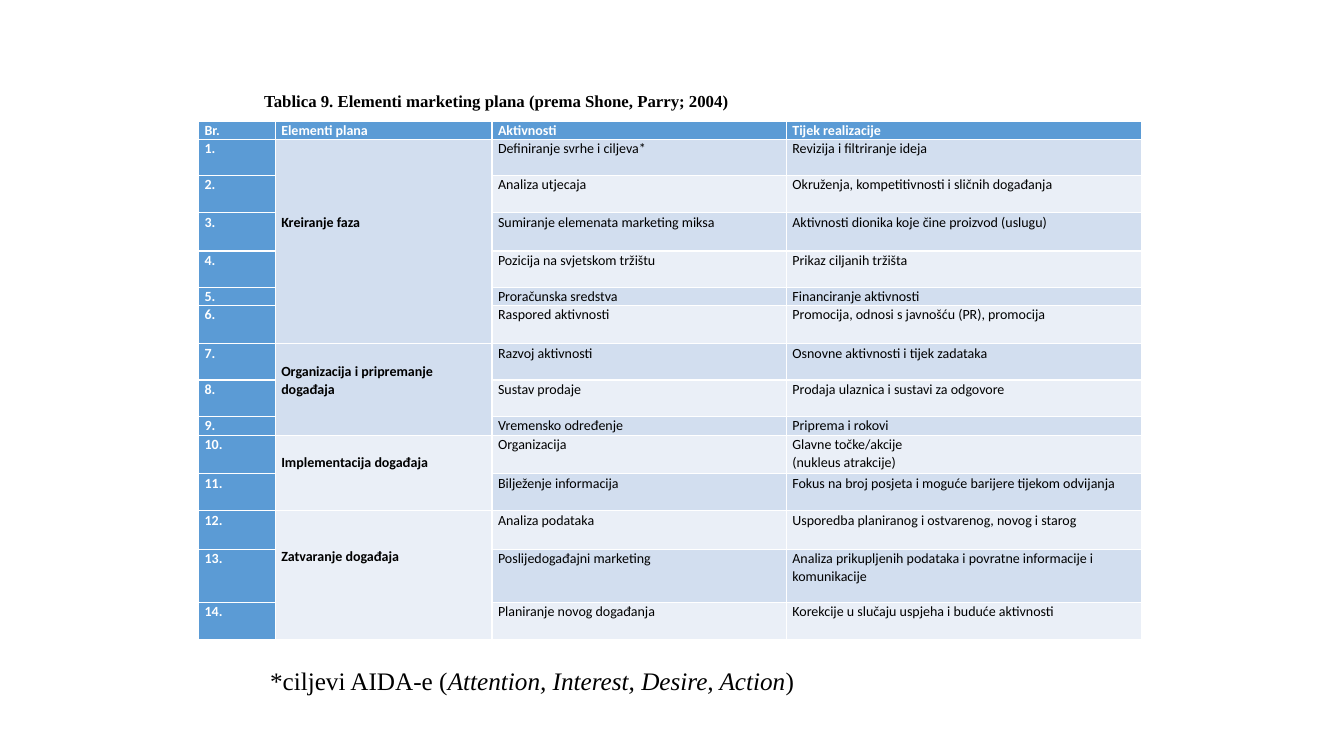
import pptx
import pptx.dml.color
import pptx.enum.text
import pptx.util

Inches = pptx.util.Inches
Pt = pptx.util.Pt
ALIGN = pptx.enum.text.PP_ALIGN
ANCHOR = pptx.enum.text.MSO_ANCHOR

CAPTION = "Tablica 9. Elementi marketing plana (prema Shone, Parry; 2004)"
FOOTNOTE = [
    ("*ciljevi AIDA-e (", False),
    ("Attention, Interest, Desire, Action", True),
    (")", False),
]
HEADINGS = ["Br.", "Elementi plana", "Aktivnosti", "Tijek realizacije"]
ACTIVITIES = [
    ("Definiranje svrhe i ciljeva*", "Revizija i filtriranje ideja"),
    ("Analiza utjecaja", "Okruženja, kompetitivnosti i sličnih događanja"),
    ("Sumiranje elemenata marketing miksa", "Aktivnosti dionika koje čine proizvod (uslugu)"),
    ("Pozicija na svjetskom tržištu", "Prikaz ciljanih tržišta"),
    ("Proračunska sredstva", "Financiranje aktivnosti"),
    ("Raspored aktivnosti", "Promocija, odnosi s javnošću (PR), promocija"),
    ("Razvoj aktivnosti", "Osnovne aktivnosti i tijek zadataka"),
    ("Sustav prodaje", "Prodaja ulaznica i sustavi za odgovore"),
    ("Vremensko određenje", "Priprema i rokovi"),
    ("Organizacija", "Glavne točke/akcije\v(nukleus atrakcije)"),
    ("Bilježenje informacija", "Fokus na broj posjeta i moguće barijere tijekom odvijanja"),
    ("Analiza podataka", "Usporedba planiranog i ostvarenog, novog i starog"),
    ("Poslijedogađajni marketing",
     "Analiza prikupljenih podataka i povratne informacije i komunikacije"),
    ("Planiranje novog događanja", "Korekcije u slučaju uspjeha i buduće aktivnosti"),
]
# phase, number of activities, space above its name in inches
PHASES = [
    ("Kreiranje faza", 6, 0.73),
    ("Organizacija i pripremanje događaja", 3, 0.18),
    ("Implementacija događaja", 2, 0.18),
    ("Zatvaranje događaja", 3, 0.36),
]
COLUMN_WIDTHS = [0.76, 2.15, 2.92, 3.52]
ROW_HEIGHTS = [0.18, 0.36, 0.37, 0.38, 0.36, 0.18, 0.38, 0.36,
               0.36, 0.19, 0.38, 0.37, 0.38, 0.53, 0.37]

BLUE, WHITE, BLACK = "5B9BD5", "FFFFFF", "000000"
BANDS = ["EAEFF7", "D2DEEF"]


def color(value):
    return pptx.dml.color.RGBColor.from_string(value)


def style(paragraph, font, size, ink, bold=False, align=ALIGN.JUSTIFY):
    paragraph.alignment = align
    paragraph.font.name = font
    paragraph.font.size = Pt(size)
    paragraph.font.bold = bold
    paragraph.font.color.rgb = color(ink)


def fill_cell(cell, text, fill, ink=BLACK, bold=True, align=ALIGN.JUSTIFY, top=0):
    cell.fill.solid()
    cell.fill.fore_color.rgb = color(fill)
    cell.margin_left = cell.margin_right = Inches(0.06)
    cell.margin_top, cell.margin_bottom = Inches(top), 0
    cell.text_frame.text = text
    paragraph = cell.text_frame.paragraphs[0]
    paragraph.line_spacing = 1.07
    style(paragraph, "Calibri", 10, ink, bold, align)


def fit_frame(shape, anchor):
    frame = shape.text_frame
    frame.word_wrap = False
    frame.auto_size = pptx.enum.text.MSO_AUTO_SIZE.SHAPE_TO_FIT_TEXT
    frame.vertical_anchor = anchor
    return frame


def add_caption(slide):
    caption = slide.shapes.title
    caption.left, caption.top = Inches(2.52), Inches(0.85)
    caption.width, caption.height = Inches(4.86), Inches(0.3)
    frame = fit_frame(caption, ANCHOR.MIDDLE)
    frame.text = CAPTION
    style(frame.paragraphs[0], "Times New Roman", 12, BLACK, bold=True)


def add_plan(slide):
    plan = slide.shapes.add_table(
        len(ROW_HEIGHTS), len(COLUMN_WIDTHS), Inches(1.97), Inches(1.2),
        Inches(sum(COLUMN_WIDTHS)), Inches(sum(ROW_HEIGHTS))).table
    for column, width in zip(plan.columns, COLUMN_WIDTHS):
        column.width = Inches(width)
    for row, height in zip(plan.rows, ROW_HEIGHTS):
        row.height = Inches(height)

    for column, heading in enumerate(HEADINGS):
        fill_cell(plan.cell(0, column), heading, BLUE, WHITE)
    for number, activity in enumerate(ACTIVITIES, start=1):
        fill_cell(plan.cell(number, 0), f"{number}.", BLUE, WHITE)
        for column, text in enumerate(activity, start=2):
            fill_cell(plan.cell(number, column), text, BANDS[number % 2],
                      bold=False, align=ALIGN.LEFT)

    first = 1
    for phase, count, top in PHASES:
        cell = plan.cell(first, 1)
        cell.merge(plan.cell(first + count - 1, 1))
        fill_cell(cell, phase, BANDS[first % 2], align=ALIGN.LEFT, top=top)
        first += count


def add_footnote(slide):
    footnote = slide.shapes.add_textbox(
        Inches(2.58), Inches(6.55), Inches(5.45), Inches(0.4))
    paragraph = fit_frame(footnote, ANCHOR.TOP).paragraphs[0]
    style(paragraph, "Times New Roman", 18, BLACK)
    for text, italic in FOOTNOTE:
        run = paragraph.add_run()
        run.text = text
        run.font.italic = italic


def main():
    deck = pptx.Presentation()
    deck.slide_width, deck.slide_height = Inches(13.33), Inches(7.5)
    slide = deck.slides.add_slide(deck.slide_layouts.get_by_name("Title Only"))
    add_plan(slide)
    add_caption(slide)
    add_footnote(slide)
    deck.save("out.pptx")


if __name__ == "__main__":
    main()
